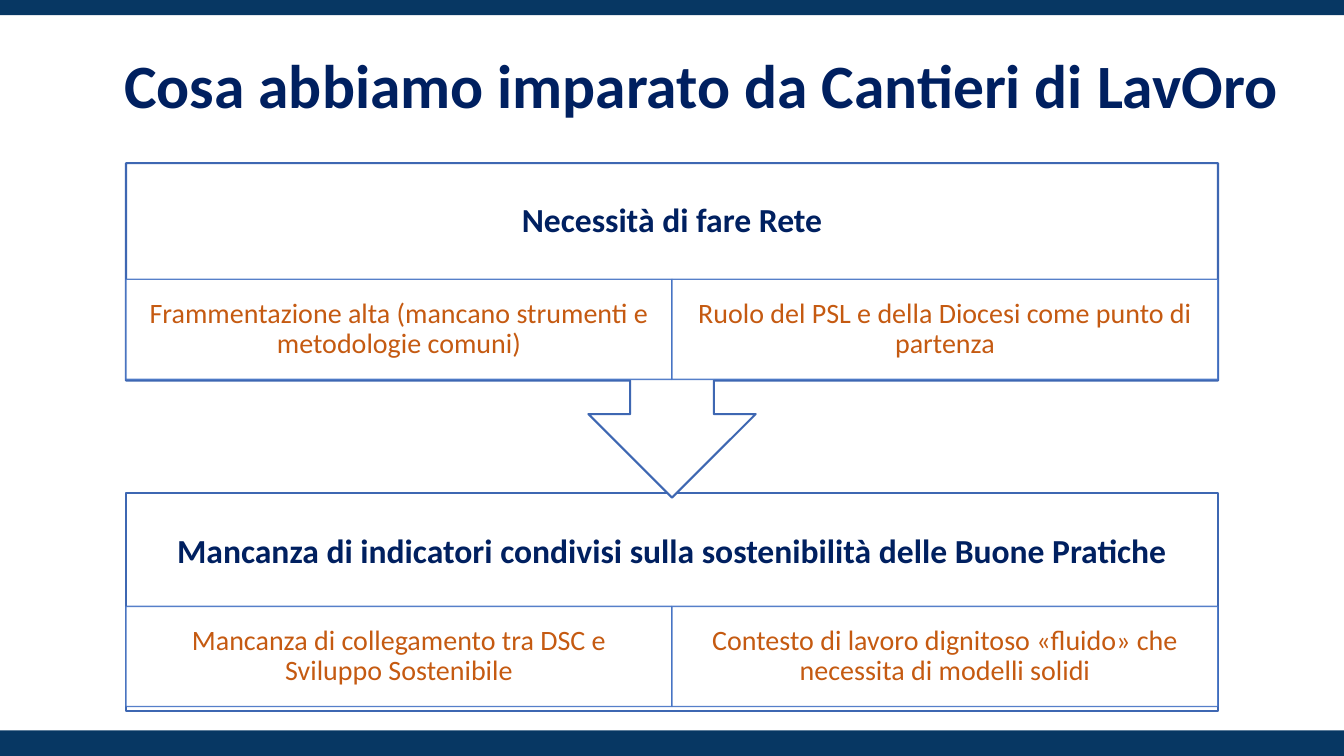
from lxml import etree
from pptx import Presentation
from pptx.dml.color import RGBColor
from pptx.enum.shapes import MSO_SHAPE
from pptx.enum.text import MSO_ANCHOR, MSO_AUTO_SIZE, PP_ALIGN
from pptx.oxml.ns import qn
from pptx.util import Pt

RECT = MSO_SHAPE.RECTANGLE
CALLOUT = MSO_SHAPE.UP_ARROW_CALLOUT
MIDDLE = MSO_ANCHOR.MIDDLE
NO_FIT = MSO_AUTO_SIZE.NONE
LEFT, CENTER = PP_ALIGN.LEFT, PP_ALIGN.CENTER

WHITE = RGBColor(0xFF, 0xFF, 0xFF)
NAVY = RGBColor(0x00, 0x20, 0x60)
ORANGE = RGBColor(0xC5, 0x5A, 0x11)
BAND = RGBColor(0x07, 0x37, 0x63)
FRAME = RGBColor(0x3E, 0x67, 0xB2)
CELL = RGBColor(0x44, 0x72, 0xC4)

WIDTH, HEIGHT = 960, 540
BLOCK_LEFT, BLOCK_WIDTH = 90, 780
HEADER_HEIGHT, CELL_HEIGHT = 84, 71.5

TITLE_FONT = {"size": Pt(44), "bold": True}
HEADER_FONT = {"size": Pt(24), "bold": True}
CELL_FONT = {"size": Pt(20), "bold": False}


def write(s, text, font, color, align, inset_x, inset_y):
    """Put one formatted paragraph in a shape."""
    tf = s.text_frame
    frame = {"word_wrap": True, "auto_size": NO_FIT, "vertical_anchor": MIDDLE,
             "margin_left": Pt(inset_x), "margin_right": Pt(inset_x),
             "margin_top": Pt(inset_y), "margin_bottom": Pt(inset_y)}
    for name, value in frame.items():
        setattr(tf, name, value)
    p = tf.paragraphs[0]
    p.alignment = align
    p.line_spacing = 0.9
    r = p.add_run()
    r.text = text
    for name, value in {"name": "Calibri", **font}.items():
        setattr(r.font, name, value)
    r.font.color.rgb = color


def add_box(sp, kind, box, fill, line=None, weight=0):
    """Add a filled preset shape with an optional outline."""
    s = sp.add_shape(kind, *map(Pt, box))
    s.shadow.inherit = False
    s.fill.solid()
    s.fill.fore_color.rgb = fill
    if line is None:
        s.line.fill.background()
    else:
        s.line.color.rgb = line
        s.line.width = Pt(weight)
    return s


def set_opacity(s, percent):
    """Make the fill and outline of a shape slightly transparent."""
    for color in s.element.spPr.iter(qn("a:srgbClr")):
        etree.SubElement(color, qn("a:alpha"), val=str(percent * 1000))


def add_title(s, text):
    """Place and format the title placeholder."""
    title = s.shapes.title
    title.left, title.top, title.width, title.height = map(Pt, (81.5, 18.5, 864, 90))
    write(title, text, TITLE_FONT, NAVY, LEFT, 7.2, 3.6)


def add_block(sp, kind, top, height, rotation, cell_top, header, cells):
    """Add a framed block with a header above a row of equal cells."""
    frame = add_box(sp, kind, (BLOCK_LEFT, top, BLOCK_WIDTH, height), WHITE, FRAME, 1.5)
    frame.rotation = rotation
    label = sp.add_textbox(*map(Pt, (BLOCK_LEFT, top, BLOCK_WIDTH, HEADER_HEIGHT)))
    write(label, header, HEADER_FONT, NAVY, CENTER, 13.5, 13.5)
    width = BLOCK_WIDTH / len(cells)
    for i, text in enumerate(cells):
        box = (BLOCK_LEFT + i * width, cell_top, width, CELL_HEIGHT)
        cell = add_box(sp, RECT, box, WHITE, CELL, 1)
        set_opacity(cell, 90)
        write(cell, text, CELL_FONT, ORANGE, CENTER, 11.5, 2)


def main():
    """Build the slide and save it."""
    prs = Presentation()
    prs.slide_width, prs.slide_height = Pt(WIDTH), Pt(HEIGHT)
    s = prs.slides.add_slide(prs.slide_layouts[5])
    sp = s.shapes
    add_title(s, "Cosa abbiamo imparato da Cantieri di LavOro")
    add_block(sp, RECT, 352.5, 155.5, 0, 433.2,
              "Mancanza di indicatori condivisi sulla sostenibilità delle Buone Pratiche",
              ["Mancanza di collegamento tra DSC e Sviluppo Sostenibile",
               "Contesto di lavoro dignitoso «fluido» che necessita di modelli solidi"])
    add_block(sp, CALLOUT, 116.5, 239, 180, 199.5,
              "Necessità di fare Rete",
              ["Frammentazione alta (mancano strumenti e metodologie comuni)",
               "Ruolo del PSL e della Diocesi come punto di partenza"])
    for top, height in ((0, 10.8), (521.7, 18.3)):
        add_box(sp, RECT, (0, top, WIDTH, height), BAND)
    prs.save("out.pptx")


if __name__ == "__main__":
    main()
